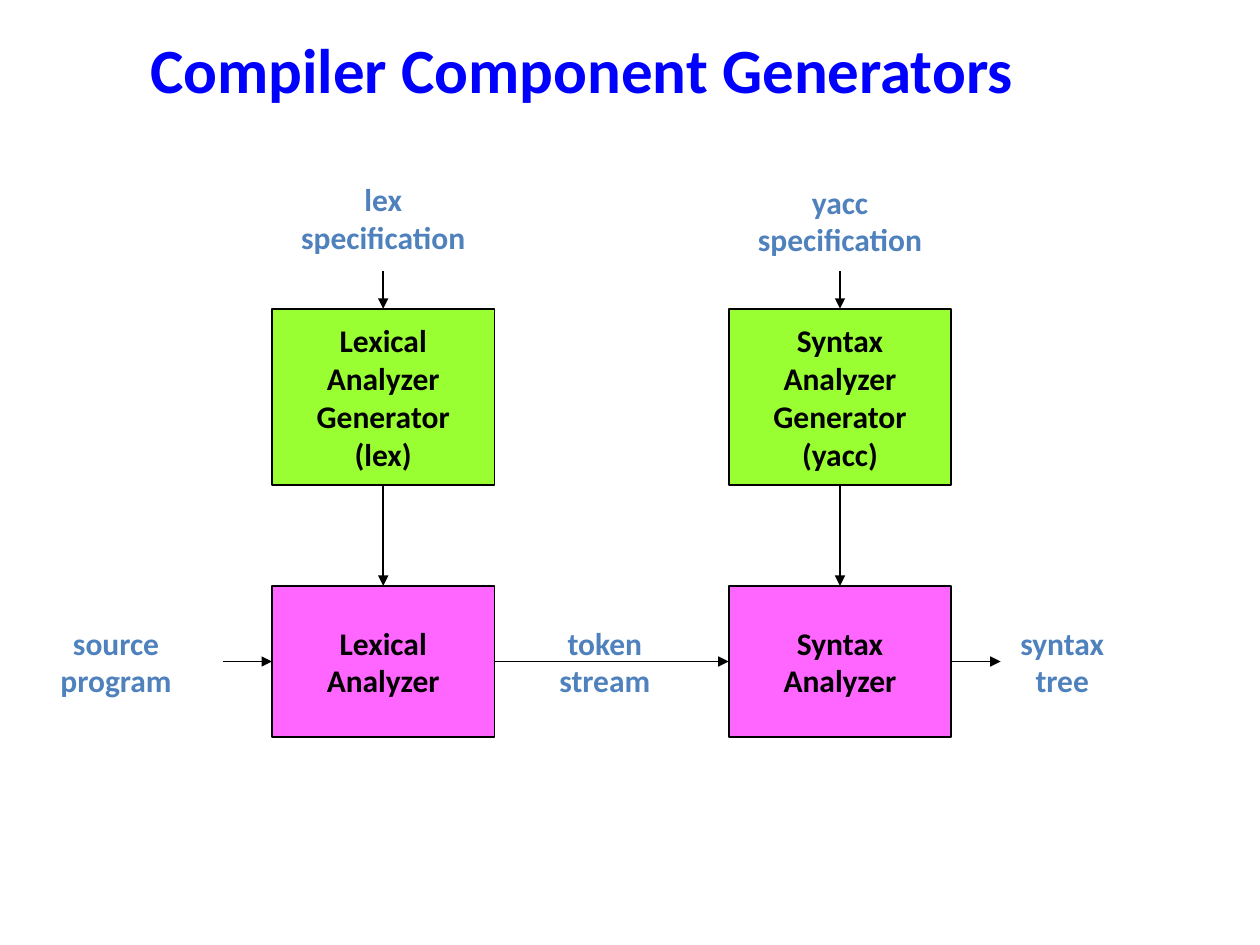
from dataclasses import dataclass

from lxml.etree import SubElement
from pptx import Presentation
from pptx.dml.color import RGBColor
from pptx.enum.shapes import MSO_CONNECTOR as Connector, MSO_SHAPE as Shape
from pptx.enum.text import MSO_ANCHOR as Anchor, PP_ALIGN as Align
from pptx.oxml.ns import qn
from pptx.util import Pt


@dataclass(frozen=True)
class Theme:
    font: str = "Calibri"
    title_size: int = 36
    body_size: int = 18
    title: str = "0000FF"
    label: str = "4F81BD"
    ink: str = "000000"
    generator: str = "99FF33"
    analyzer: str = "FF66FF"
    line_width: float = 1


THEME = Theme()
TOP, LEFT, BOTTOM, RIGHT = range(4)

# Grid, in points
BOX_WIDTH = 127.2
COLUMNS = {"Lexical": (155.4, "lex", 95.8), "Syntax": (416.4, "yacc", 97.2)}
GENERATOR_TOP, GENERATOR_HEIGHT = 176.4, 100.8
ANALYZER_TOP, ANALYZER_HEIGHT = 334.8, 86.4
FLOW_Y = ANALYZER_TOP + ANALYZER_HEIGHT / 2
LABEL_HEIGHT = 57.6
SHORT_ARROW = 28.2
INPUT_ARROW = 21.6


def write_lines(shape, lines, size, color, wrap=False):
    """Write one centred bold paragraph per line."""
    frame = shape.text_frame
    frame.word_wrap = wrap
    frame.vertical_anchor = Anchor.MIDDLE
    frame.text = "\n".join(lines)
    font_format = {"name": THEME.font, "size": Pt(size), "bold": True}
    for paragraph in frame.paragraphs:
        paragraph.alignment = Align.CENTER
        font = paragraph.runs[0].font
        for name, value in font_format.items():
            setattr(font, name, value)
        font.color.rgb = RGBColor.from_string(color)


def style_line(line):
    line.width = Pt(THEME.line_width)
    line.color.rgb = RGBColor.from_string(THEME.ink)


def add_box(slide, left, top, height, fill, lines):
    box = slide.shapes.add_shape(
        Shape.RECTANGLE, Pt(left), Pt(top), Pt(BOX_WIDTH), Pt(height))
    box.shadow.inherit = False
    box.fill.solid()
    box.fill.fore_color.rgb = RGBColor.from_string(fill)
    style_line(box.line)
    write_lines(box, lines, THEME.body_size, THEME.ink)
    return box


def add_label(slide, left, top, width, lines):
    label = slide.shapes.add_textbox(
        Pt(left), Pt(top), Pt(width), Pt(LABEL_HEIGHT))
    write_lines(label, lines, THEME.body_size, THEME.label)


def add_arrow(slide, start=(0, 0), end=(0, 0), source=None, target=None):
    """Draw an arrow; source and target are (box, side) pairs to join."""
    arrow = slide.shapes.add_connector(
        Connector.STRAIGHT, *(Pt(value) for value in (*start, *end)))
    if source:
        arrow.begin_connect(*source)
    if target:
        arrow.end_connect(*target)
    style_line(arrow.line)
    SubElement(arrow.line._get_or_add_ln(), qn("a:tailEnd"), type="triangle")
    SubElement(arrow._element.spPr, qn("a:effectLst"))


def add_title(slide, text):
    title = slide.shapes.add_textbox(Pt(24), Pt(6), Pt(617), Pt(66))
    write_lines(title, [text], THEME.title_size, THEME.title, wrap=True)


def add_column(slide, name, left, tool, label_top):
    """Stack specification, generator and analyzer; return the analyzer."""
    center = left + BOX_WIDTH / 2
    generator = add_box(
        slide, left, GENERATOR_TOP, GENERATOR_HEIGHT, THEME.generator,
        [name, "Analyzer", "Generator", f"({tool})"])
    analyzer = add_box(
        slide, left, ANALYZER_TOP, ANALYZER_HEIGHT, THEME.analyzer,
        [name, "Analyzer"])
    add_label(slide, left, label_top, BOX_WIDTH, [tool, "specification"])
    add_arrow(slide, (center, GENERATOR_TOP - INPUT_ARROW),
              (center, GENERATOR_TOP), target=(generator, TOP))
    add_arrow(slide, source=(generator, BOTTOM), target=(analyzer, TOP))
    return analyzer


def main():
    presentation = Presentation()
    presentation.slide_width, presentation.slide_height = Pt(720), Pt(540)
    slide = presentation.slides.add_slide(presentation.slide_layouts[6])

    add_title(slide, "Compiler Component Generators")

    # Generator columns
    lexical, syntax = (
        add_column(slide, name, *place) for name, place in COLUMNS.items())

    # Flow from source program to syntax tree
    first_left = COLUMNS["Lexical"][0]
    last_right = COLUMNS["Syntax"][0] + BOX_WIDTH
    add_arrow(slide, (first_left - SHORT_ARROW, FLOW_Y), (first_left, FLOW_Y),
              target=(lexical, LEFT))
    add_arrow(slide, source=(lexical, RIGHT), target=(syntax, LEFT))
    add_arrow(slide, (last_right, FLOW_Y), (last_right + SHORT_ARROW, FLOW_Y),
              source=(syntax, RIGHT))

    # Flow labels
    label_top = FLOW_Y - LABEL_HEIGHT / 2
    for left, width, lines in (
            (23.8, 85, ["source", "program"]),
            (310.3, 70.6, ["token", "stream"]),
            (571.7, 70.6, ["syntax", "tree"])):
        add_label(slide, left, label_top, width, lines)

    presentation.save("out.pptx")


if __name__ == "__main__":
    main()
